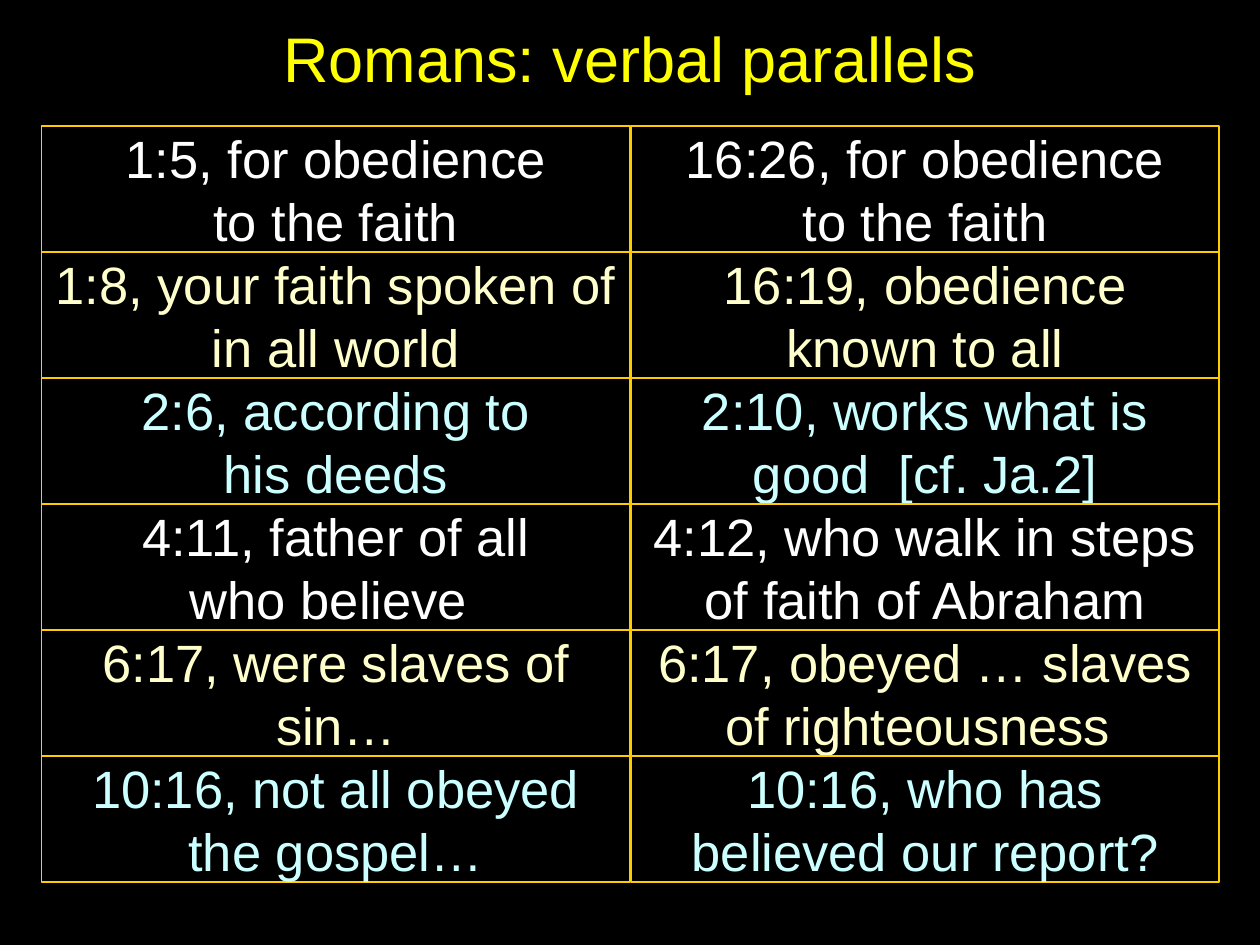
from pptx import Presentation
from pptx.dml.color import RGBColor
from pptx.enum import shapes, text
from pptx.util import Cm, Pt

BLACK = RGBColor(0, 0, 0)
GOLD = RGBColor(0xFF, 0xCC, 0)
YELLOW = RGBColor(0xFF, 0xFF, 0)
WHITE = RGBColor(0xFF, 0xFF, 0xFF)
CREAM = RGBColor(0xFF, 0xFF, 0xCC)
AQUA = RGBColor(0xCC, 0xFF, 0xFF)

TITLE = "Romans: verbal parallels"
PAIRS = [
    ("1:5, for obedience\nto the faith", "16:26, for obedience\nto the faith"),
    ("1:8, your faith spoken of in all world", "16:19, obedience\nknown to all"),
    ("2:6, according to\nhis deeds", "2:10, works what is good  [cf. Ja.2]"),
    ("4:11, father of all\nwho believe ", "4:12, who walk in steps of faith of Abraham"),
    ("6:17, were slaves of sin…", "6:17, obeyed … slaves of righteousness "),
    ("10:16, not all obeyed the gospel…", "10:16, who has believed our report?"),
]
TINTS = [WHITE, CREAM, AQUA]
LEFT, TOP, WIDE, HIGH, STEP = 0.84, 2.54, 11.86, 2.54, 11.88
FRAME = {
    "word_wrap": True,
    "vertical_anchor": text.MSO_ANCHOR.MIDDLE,
    "margin_left": Cm(0.24),
    "margin_right": Cm(0.24),
}


def write(shape, words, size, tint):
    frame = shape.text_frame
    for key, value in FRAME.items():
        setattr(frame, key, value)
    para = frame.paragraphs[0]
    para.text = words
    para.alignment = text.PP_ALIGN.CENTER
    for run in para.runs:
        for key, value in {"name": "Arial", "size": Pt(size)}.items():
            setattr(run.font, key, value)
        run.font.color.rgb = tint


deck = Presentation()
deck.slide_width, deck.slide_height = Cm(25.4), Cm(19.05)
slide = deck.slides.add_slide(deck.slide_layouts[6])
slide.background.fill.solid()
slide.background.fill.fore_color.rgb = BLACK

title = slide.shapes.add_textbox(Cm(1.27), Cm(0.2), Cm(22.86), Cm(1.9))
write(title, TITLE, 36, YELLOW)

for row, pair in enumerate(PAIRS):
    for col, words in enumerate(pair):
        box = slide.shapes.add_shape(
            shapes.MSO_SHAPE.RECTANGLE,
            Cm(LEFT + col * STEP), Cm(TOP + row * HIGH), Cm(WIDE), Cm(HIGH))
        box.shadow.inherit = False
        box.fill.solid()
        box.fill.fore_color.rgb = BLACK
        box.line.color.rgb = GOLD
        box.line.width = Pt(1)
        write(box, words, 30, TINTS[row % len(TINTS)])

deck.save("out.pptx")
